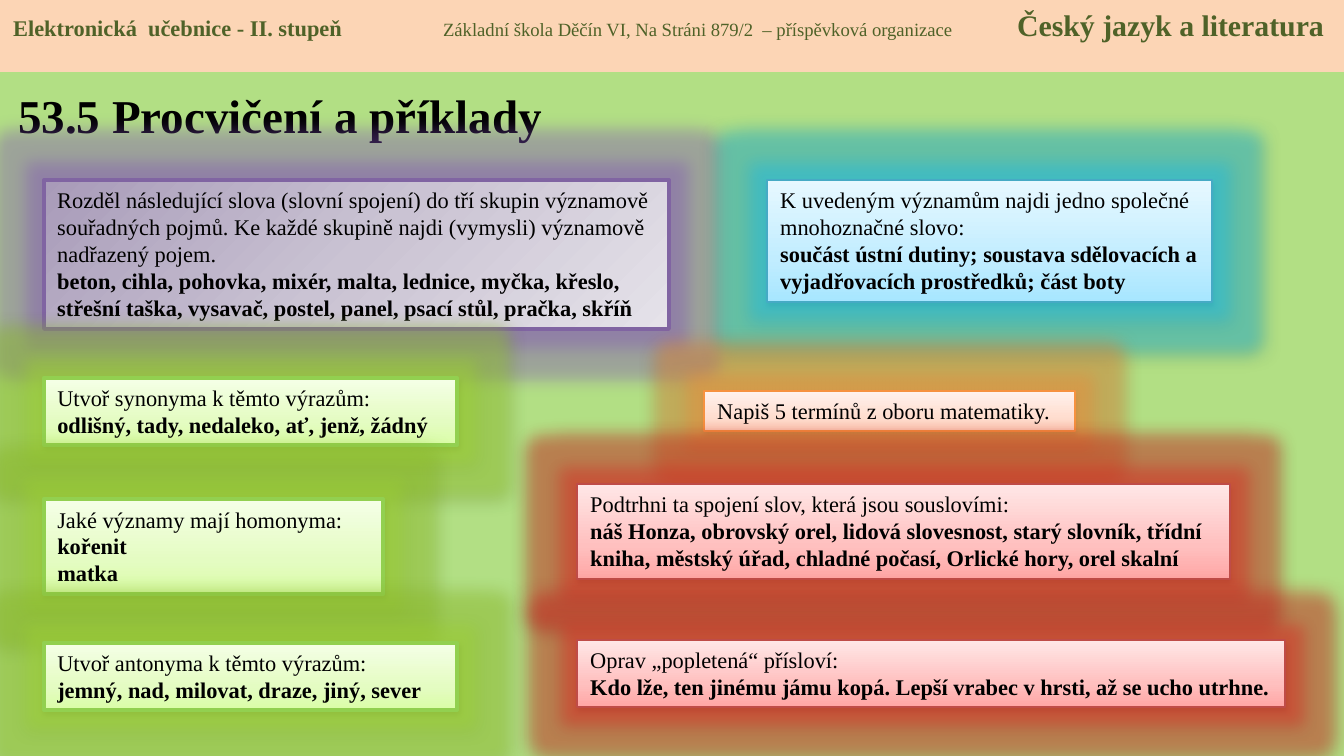
from dataclasses import dataclass

from lxml import etree
from pptx import Presentation
from pptx import util as u
from pptx.dml.color import RGBColor
from pptx.enum import shapes, text
from pptx.oxml import ns

PX = 914400 / 134.4  # EMU in one px
WIDTH, HEIGHT = 1344, 756


def px(length):
    return u.Emu(round(length * PX))


@dataclass(frozen=True)
class Look:
    """Colours of one kind of exercise box."""
    stops: tuple  # (position in %, colour)
    angle: int
    line: str
    line_width: float
    glow: str
    shadow: bool = True


class Theme:
    font = "Times New Roman"
    background, header = "B2DF84", "FCD5B5"
    ink, header_ink = "000000", "4F6228"
    title_size, subject_size, body_size, school_size = 25.2, 16, 12, 10
    purple = Look(((0, "A89BB9"), (50, "CAC3D3"), (100, "E5E2E9")),
                  45, "8064A2", 2, "8064A2", False)
    green = Look(((0, "DAFDA7"), (35, "E4FCC2"), (100, "F5FFE7")),
                 270, "92D050", 2.25, "9BBB59")
    teal = Look(((0, "A7E6FF"), (35, "C1EDFF"), (100, "E7F8FF")),
                270, "46AAC5", 0.75, "4BACC6")
    orange = Look(((0, "FFD2BD"), (35, "FFDED0"), (100, "FFF2ED")),
                  270, "F69240", 0.75, "F79646")
    red = Look(((0, "FFA6A5"), (35, "FFC0BF"), (100, "FFE7E7")),
               270, "BF4C48", 0.75, "C0504D")


def element(parent, tag, **attributes):
    child = etree.SubElement(parent, ns.qn(tag))
    for name, value in attributes.items():
        child.set(name, str(value))
    return child


class SlideBuilder:
    def __init__(self, slide, theme):
        self.slide, self.theme = slide, theme

    def background(self):
        fill = self.slide.background.fill
        fill.solid()
        fill.fore_color.rgb = RGBColor.from_string(self.theme.background)

    def run(self, paragraph, words, size, colour, bold=False):
        run = paragraph.add_run()
        run.text = words
        font = run.font
        font.name, font.size, font.bold = self.theme.font, u.Pt(size), bold
        font.color.rgb = RGBColor.from_string(colour)

    def rectangle(self, left, top, width, height):
        shape = self.slide.shapes.add_shape(
            shapes.MSO_SHAPE.RECTANGLE, px(left), px(top), px(width), px(height))
        shape.shadow.inherit = False
        frame = shape.text_frame
        frame.word_wrap = True
        frame.vertical_anchor = text.MSO_ANCHOR.TOP
        frame.paragraphs[0].alignment = text.PP_ALIGN.LEFT
        return shape

    def title(self, words, left, top, width, height):
        box = self.slide.shapes.add_textbox(px(left), px(top), px(width), px(height))
        box.text_frame.word_wrap = True
        box.text_frame.vertical_anchor = text.MSO_ANCHOR.MIDDLE
        self.run(box.text_frame.paragraphs[0], words,
                 self.theme.title_size, self.theme.ink, True)

    def header(self, height, parts, tabs):
        shape = self.rectangle(0, 0, WIDTH, height)
        shape.fill.solid()
        shape.fill.fore_color.rgb = RGBColor.from_string(self.theme.header)
        shape.line.fill.background()
        paragraph = shape.text_frame.paragraphs[0]
        stops = element(paragraph._p.get_or_add_pPr(), "a:tabLst")
        for position in tabs:
            element(stops, "a:tab", pos=px(position), algn="l")
        for words, size, bold in parts:
            self.run(paragraph, words, size, self.theme.header_ink, bold)

    def exercise(self, look, place, task, *answers):
        """Glowing gradient box: a task, then bold lines of words."""
        shape = self.rectangle(*place)
        shape.line.color.rgb = RGBColor.from_string(look.line)
        shape.line.width = u.Pt(look.line_width)
        self.gradient(shape, look)
        self.effects(shape, look)
        frame = shape.text_frame
        frame.auto_size = text.MSO_AUTO_SIZE.SHAPE_TO_FIT_TEXT
        for index, words in enumerate((task, *answers)):
            paragraph = frame.add_paragraph() if index else frame.paragraphs[0]
            paragraph.alignment = text.PP_ALIGN.LEFT
            self.run(paragraph, words, self.theme.body_size, self.theme.ink, index > 0)

    def gradient(self, shape, look):
        properties = shape._element.spPr
        gradient = element(properties, "a:gradFill", rotWithShape=1)
        stops = element(gradient, "a:gsLst")
        for position, colour in look.stops:
            stop = element(stops, "a:gs", pos=position * 1000)
            element(stop, "a:srgbClr", val=colour)
        element(gradient, "a:lin", ang=look.angle * 60000, scaled=0)
        properties.find(ns.qn("a:prstGeom")).addnext(gradient)

    def effects(self, shape, look):
        effects = shape._element.spPr.find(ns.qn("a:effectLst"))
        glow = element(effects, "a:glow", rad=u.Pt(18))
        colour = element(glow, "a:srgbClr", val=look.glow)
        element(colour, "a:satMod", val=175000)
        element(colour, "a:alpha", val=40000)
        if look.shadow:
            shadow = element(effects, "a:outerShdw", blurRad=u.Pt(3.1),
                             dist=u.Pt(1.6), dir=90 * 60000, rotWithShape=0)
            colour = element(shadow, "a:srgbClr", val=self.theme.ink)
            element(colour, "a:alpha", val=38000)


def main():
    presentation = Presentation()
    presentation.slide_width, presentation.slide_height = px(WIDTH), px(HEIGHT)
    slide = presentation.slides.add_slide(presentation.slide_layouts[6])
    theme = Theme()
    builder = SlideBuilder(slide, theme)
    builder.background()

    # Title and header band
    builder.title("53.5 Procvičení a příklady", 5, 71, 587, 87)
    builder.header(72, (
        ("Elektronická  učebnice - II. stupeň\t", theme.body_size, True),
        ("Základní škola Děčín VI, Na Stráni 879/2  – příspěvková organizace\t",
         theme.school_size, False),
        ("Český jazyk a literatura", theme.subject_size, True)), tabs=(430, 1004))

    # Left column
    left = 44
    builder.exercise(
        theme.purple, (left, 180, 625, 149),
        "Rozděl následující slova (slovní spojení) do tří skupin významově souřadných "
        "pojmů. Ke každé skupině najdi (vymysli) významově nadřazený pojem.",
        "beton, cihla, pohovka, mixér, malta, lednice, myčka, křeslo, "
        "střešní taška, vysavač, postel, panel, psací stůl, pračka, skříň")
    builder.exercise(theme.green, (left, 378, 413, 67),
                     "Utvoř synonyma k těmto výrazům:",
                     "odlišný, tady, nedaleko, ať, jenž, žádný")
    builder.exercise(theme.green, (left, 499, 339, 95),
                     "Jaké významy mají homonyma:", "kořenit", "matka")
    builder.exercise(theme.green, (left, 643, 413, 67),
                     "Utvoř antonyma k těmto výrazům:",
                     "jemný, nad, milovat, draze, jiný, sever")

    # Right column
    builder.exercise(
        theme.teal, (767, 180, 445, 122),
        "K uvedeným významům najdi jedno společné mnohoznačné slovo:",
        "součást ústní dutiny; soustava sdělovacích a vyjadřovacích prostředků; část boty")
    builder.exercise(theme.orange, (704, 391, 371, 40),
                     "Napiš 5 termínů z oboru matematiky.")
    builder.exercise(
        theme.red, (577, 484, 653, 95),
        "Podtrhni ta spojení slov, která jsou souslovími:",
        "náš Honza, obrovský orel, lidová slovesnost, starý slovník, třídní "
        "kniha, městský úřad, chladné počasí, Orlické hory, orel skalní")
    builder.exercise(theme.red, (577, 640, 708, 67),
                     "Oprav „popletená“ přísloví:",
                     "Kdo lže, ten jinému jámu kopá. Lepší vrabec v hrsti, až se ucho utrhne.")

    presentation.save("out.pptx")


if __name__ == "__main__":
    main()
